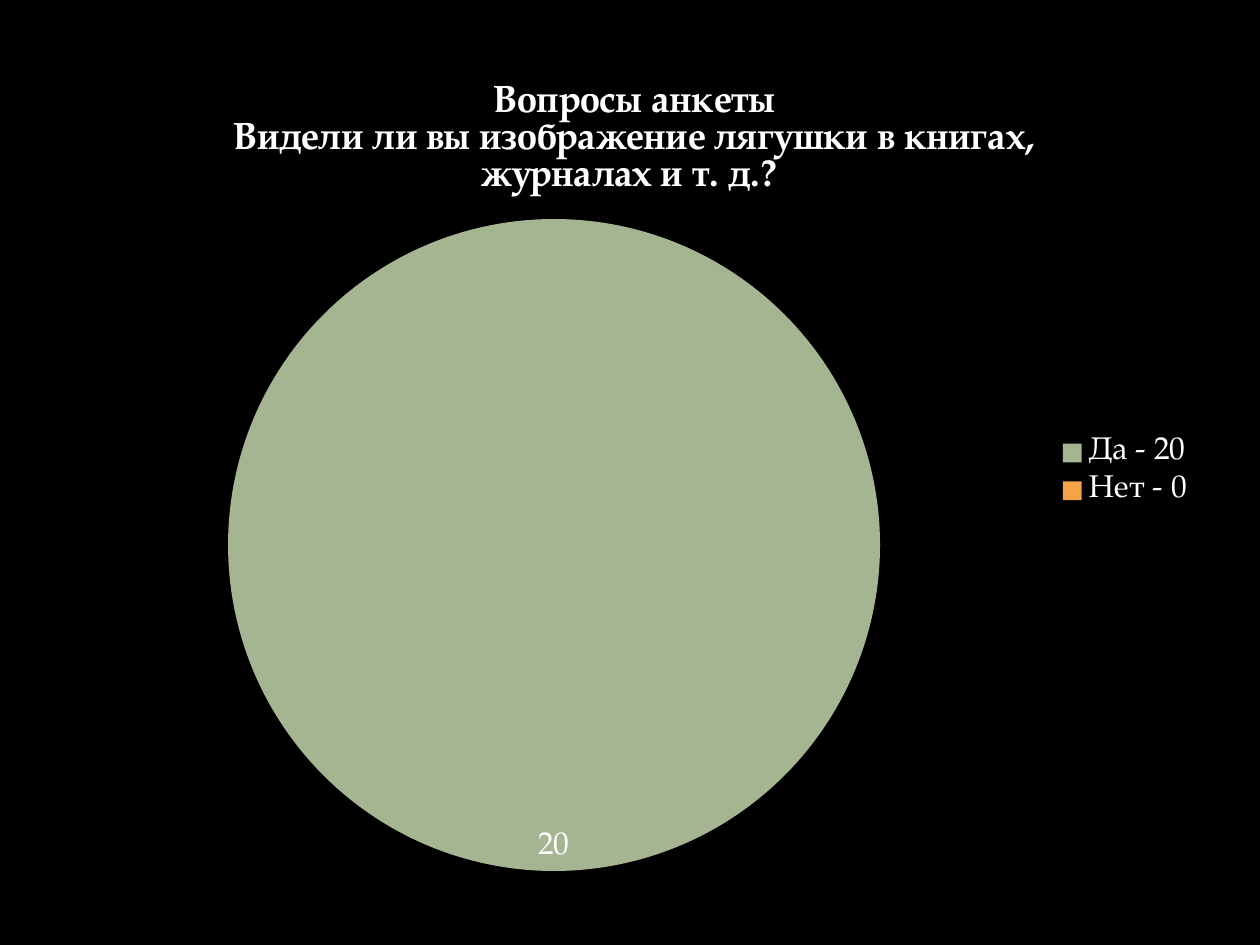
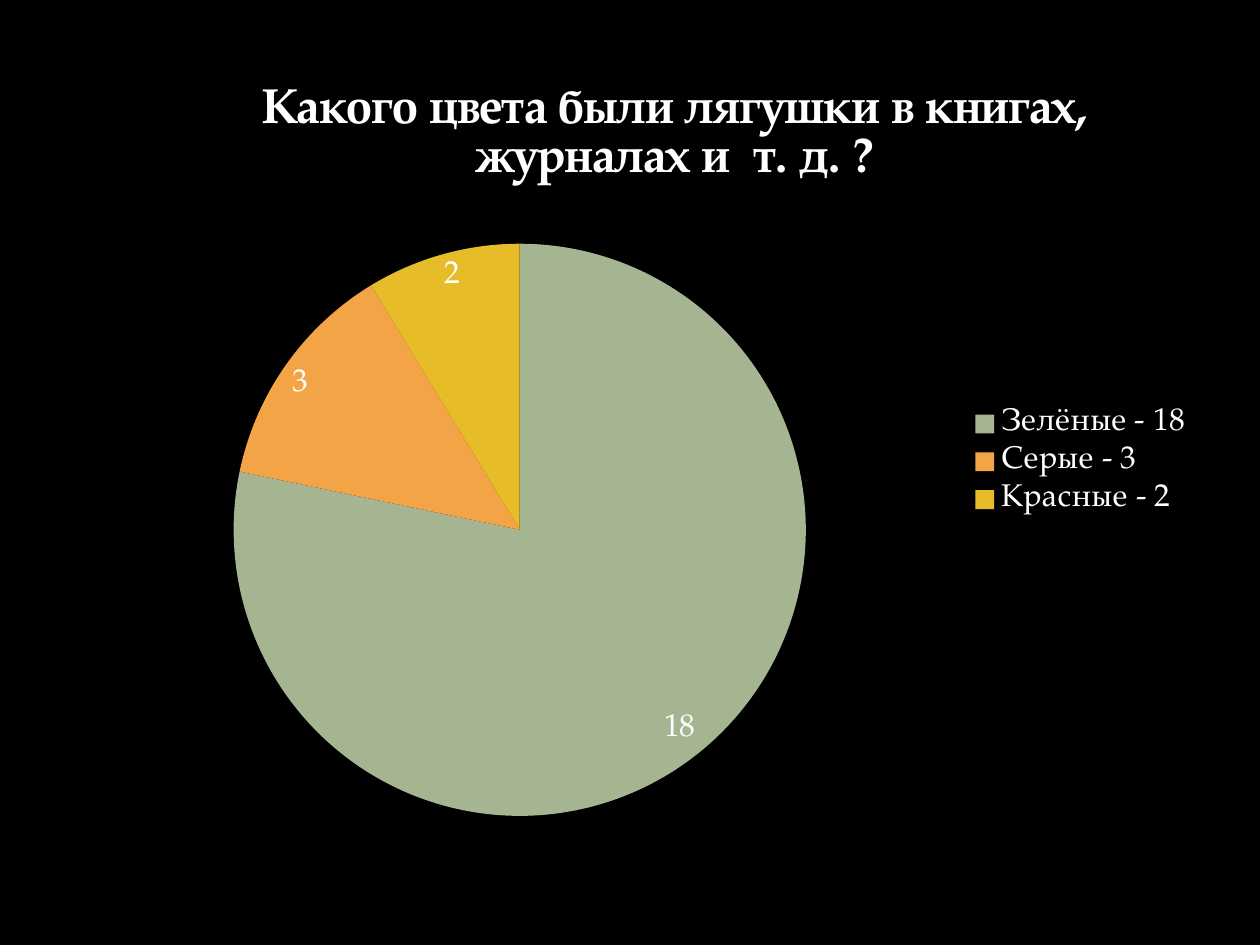
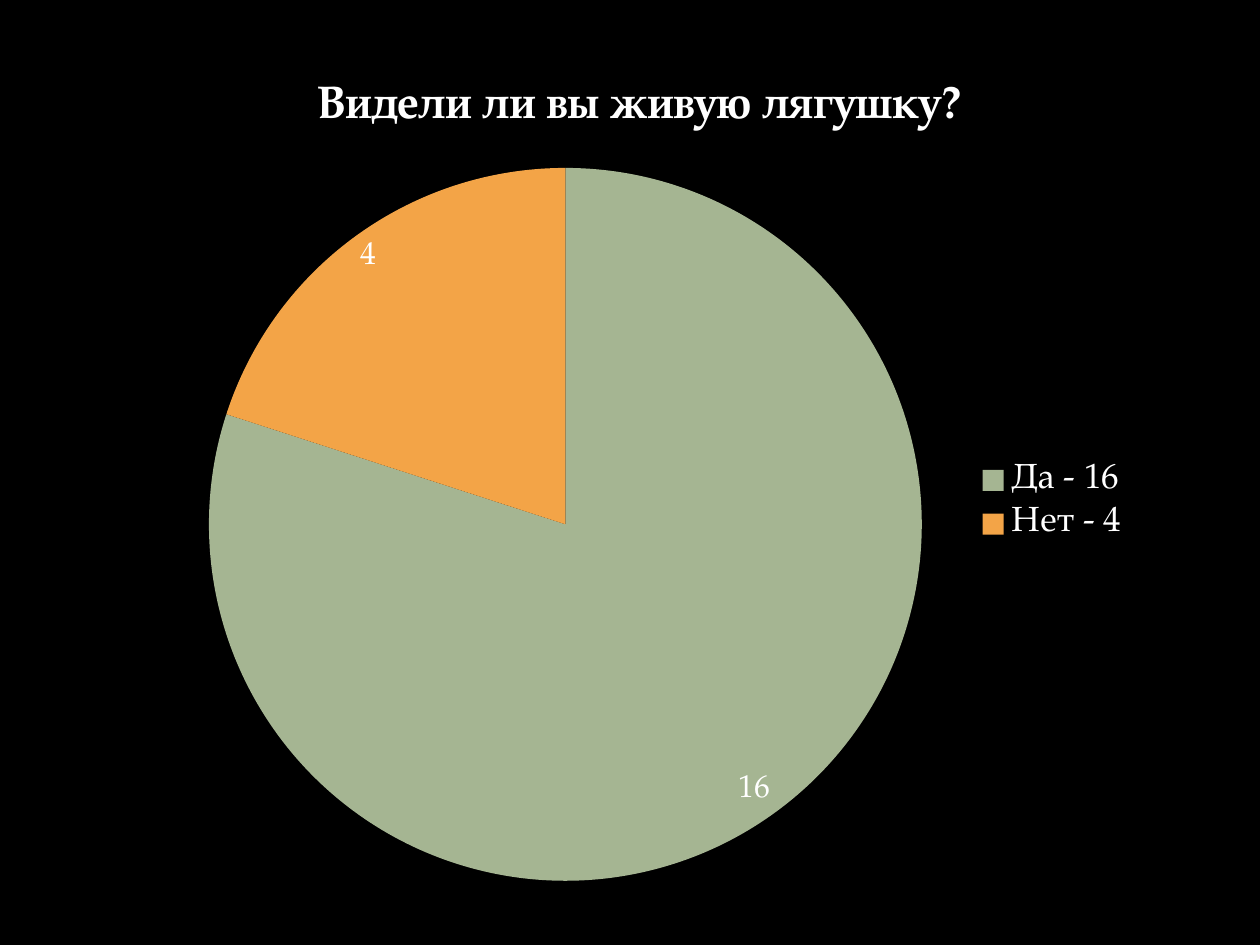
from lxml.etree import SubElement
from pptx import Presentation
from pptx.chart.data import CategoryChartData
from pptx.dml.color import RGBColor
from pptx.enum.chart import XL_CHART_TYPE as CT, XL_LABEL_POSITION as LP, XL_LEGEND_POSITION as LG
from pptx.oxml import parse_xml
from pptx.oxml.ns import nsdecls, qn
from pptx.util import Pt

FONT = "TeX Gyre Pagella"
BODY_SIZE = 18
COLORS = {"back": "000000", "text": "FFFFFF"}
SLICES = ["A5B592", "F3A447", "E7BC29"]

SURVEY = [
    {
        "title": ["Вопросы анкеты",
                  "Видели ли вы изображение лягушки в книгах, журналах и т. д.? "],
        "title_size": 21.6,
        "answers": [("Да - 20 ", 20), ("Нет - 0", 0)],
        "frame": (31, 31.7, 663, 476),
        "pie": (130.3, 125.2, 372.6),
    },
    {
        "title": ["Какого цвета были лягушки в книгах, журналах и  т. д. ?"],
        "title_size": 28,
        "title_at": (145, 42),
        "answers": [("Зелёные - 18", 18), ("Серые - 3", 3), ("Красные - 2", 2)],
        "frame": (36.7, 25.9, 652.3, 476),
        "pie": (133.5, 139.3, 327),
    },
    {
        "title": ["Видели ли вы живую лягушку?"],
        "title_size": 26,
        "title_at": (177, 41),
        "legend_size": 20,
        "legend_at": (555, 260),
        "answers": [("Да - 16", 16), ("Нет - 4", 4)],
        "frame": (48.2, 31.7, 648, 481.7),
        "pie": (119.4, 96, 407.4),
    },
]


def rgb(name):
    return RGBColor.from_string(COLORS[name])


def set_font(font, size, bold=False):
    font.name, font.size, font.bold = FONT, Pt(size), bold
    font.color.rgb = rgb("text")


def place(parent, index, frame, left, top, side=None):
    for old in parent.findall(qn("c:layout")):
        parent.remove(old)
    layout = parse_xml(f"<c:layout {nsdecls('c')}/>")
    manual = SubElement(layout, qn("c:manualLayout"))
    x, y, w, h = frame
    values = {"xMode": "edge", "yMode": "edge", "x": (left - x) / w, "y": (top - y) / h}
    if side:
        values = {"layoutTarget": "inner", **values, "w": side / w, "h": side / h}
    for tag, value in values.items():
        SubElement(manual, qn(f"c:{tag}")).set("val", str(value))
    parent.insert(index, layout)


def add_title(chart, item):
    tf = chart.chart_title.text_frame
    for i, line in enumerate(item["title"]):
        p = tf.add_paragraph() if i else tf.paragraphs[0]
        r = p.add_run()
        r.text = line
        set_font(r.font, item["title_size"], True)
    chart.chart_title.include_in_layout = False
    if "title_at" in item:
        place(chart.chart_title._element, 1, item["frame"], *item["title_at"])


def add_legend(chart, item):
    chart.has_legend = True
    legend = chart.legend
    legend.position = LG.RIGHT
    legend.include_in_layout = False
    set_font(legend.font, item.get("legend_size", BODY_SIZE))
    if "legend_at" in item:
        place(legend._element, 1, item["frame"], *item["legend_at"])


def add_pie(slide, item):
    data = CategoryChartData()
    data.categories = [name for name, count in item["answers"]]
    data.add_series(" ".join(item["title"]), [count for name, count in item["answers"]])
    chart = slide.shapes.add_chart(CT.PIE, *map(Pt, item["frame"]), data).chart
    set_font(chart.font, BODY_SIZE)
    add_title(chart, item)
    add_legend(chart, item)
    plot = chart.plots[0]
    plot.vary_by_categories = True
    for i in range(len(item["answers"])):
        fmt = plot.series[0].points[i].format
        fmt.fill.solid()
        fmt.fill.fore_color.rgb = RGBColor.from_string(SLICES[i])
        fmt.line.fill.background()
    plot.has_data_labels = True
    labels = plot.data_labels
    labels.show_value = True
    labels.show_percentage = False
    labels.position = LP.INSIDE_END
    set_font(labels.font, BODY_SIZE)
    place(chart._chartSpace.chart.plotArea, 0, item["frame"], *item["pie"])


def main():
    prs = Presentation()
    prs.slide_width, prs.slide_height = Pt(720), Pt(540)
    for item in SURVEY:
        s = prs.slides.add_slide(prs.slide_layouts[6])
        s.background.fill.solid()
        s.background.fill.fore_color.rgb = rgb("back")
        add_pie(s, item)
    prs.save("out.pptx")


if __name__ == "__main__":
    main()
